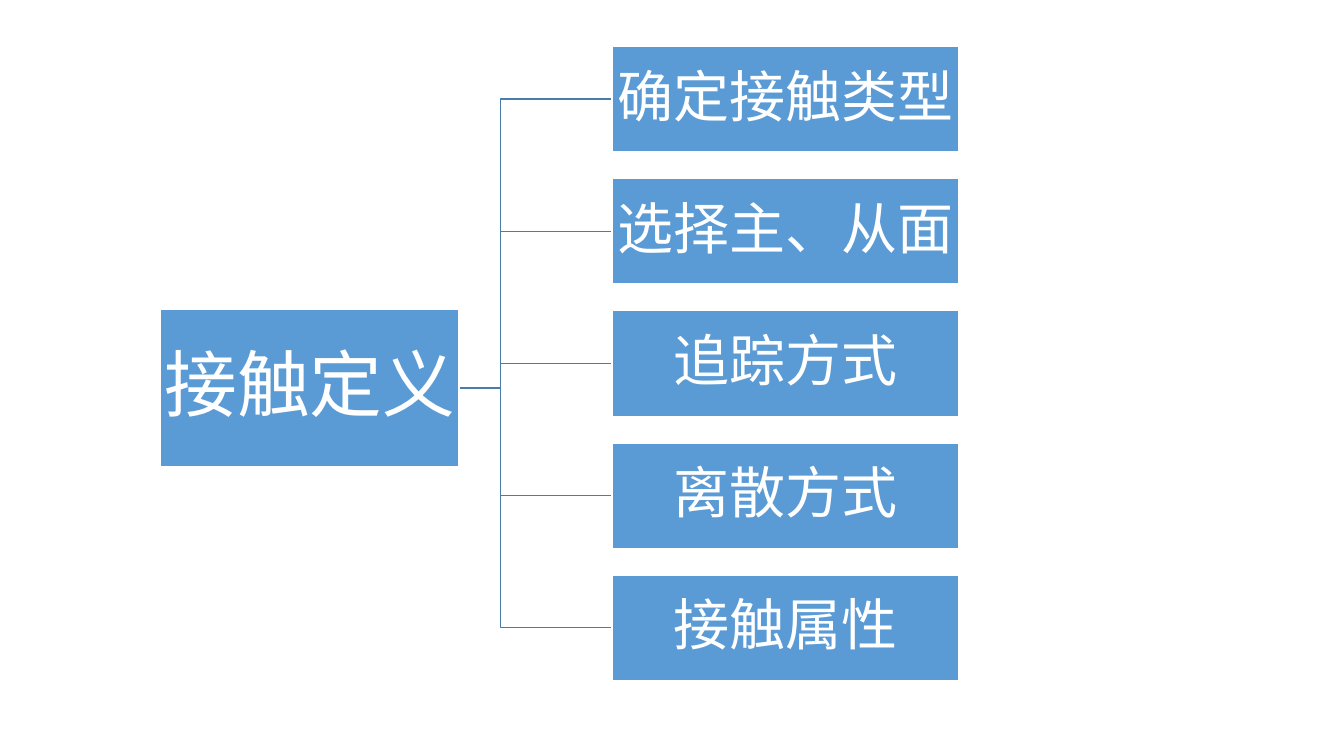
from pptx import Presentation
from pptx.dml.color import RGBColor
from pptx.enum.shapes import MSO_SHAPE
from pptx.enum.text import MSO_ANCHOR, PP_ALIGN
from pptx.oxml.ns import qn
from pptx.util import Cm, Pt
from lxml.etree import SubElement

BLUE = RGBColor(0x5B, 0x9B, 0xD5)
LINE_BLUE = RGBColor(0x49, 0x7C, 0xAB)
WHITE = RGBColor(0xFF, 0xFF, 0xFF)
FONT = "Noto Sans CJK SC"

ROOT = "接触定义"
STEPS = ["确定接触类型", "选择主、从面", "追踪方式", "离散方式", "接触属性"]

ROOT_MIDDLE = 9.78
STEP_LEFT, STEP_TOP = 15.42, 1.17
STEP_WIDTH, STEP_HEIGHT = 8.74, 2.66
STEP_PITCH = 3.33
BRANCH_START, TRUNK = 9.8, 12.61


def add_box(page, text, left, top, width, height, size, inset):
    box = page.shapes.add_shape(
        MSO_SHAPE.RECTANGLE, Cm(left), Cm(top), Cm(width), Cm(height))
    box.shadow.inherit = False
    box.fill.solid()
    box.fill.fore_color.rgb = BLUE
    box.line.color.rgb = WHITE
    box.line.width = Pt(1)
    frame = box.text_frame
    frame.word_wrap = False
    frame.vertical_anchor = MSO_ANCHOR.MIDDLE
    frame.margin_left = frame.margin_right = Cm(inset)
    frame.margin_top = frame.margin_bottom = Cm(inset)
    para = frame.paragraphs[0]
    para.alignment = PP_ALIGN.CENTER
    para.line_spacing = 0.9
    span = para.add_run()
    span.text = text
    span.font.size = Pt(size)
    span.font.color.rgb = WHITE
    span.font.name = FONT
    # East Asian characters take their own typeface
    SubElement(span.font._element, qn("a:ea")).set("typeface", FONT)


deck = Presentation()
deck.slide_width, deck.slide_height = Cm(33.87), Cm(19.05)
page = deck.slides.add_slide(deck.slide_layouts[6])

# Branches from the root to each step, behind the boxes
for row in range(len(STEPS)):
    step_middle = STEP_TOP + row * STEP_PITCH + STEP_HEIGHT / 2
    builder = page.shapes.build_freeform(Cm(BRANCH_START), Cm(ROOT_MIDDLE))
    builder.add_line_segments([
        (Cm(TRUNK), Cm(ROOT_MIDDLE)),
        (Cm(TRUNK), Cm(step_middle)),
        (Cm(STEP_LEFT), Cm(step_middle)),
    ], close=False)
    branch = builder.convert_to_shape()
    branch.shadow.inherit = False
    branch.fill.background()
    branch.line.color.rgb = LINE_BLUE
    branch.line.width = Pt(1)

# Root box
add_box(page, ROOT, 4.05, 7.8, 7.52, 3.96, 52, 0.09)

# Step boxes
for row, step in enumerate(STEPS):
    add_box(page, step, STEP_LEFT, STEP_TOP + row * STEP_PITCH,
            STEP_WIDTH, STEP_HEIGHT, 40, 0.07)

deck.save("out.pptx")
